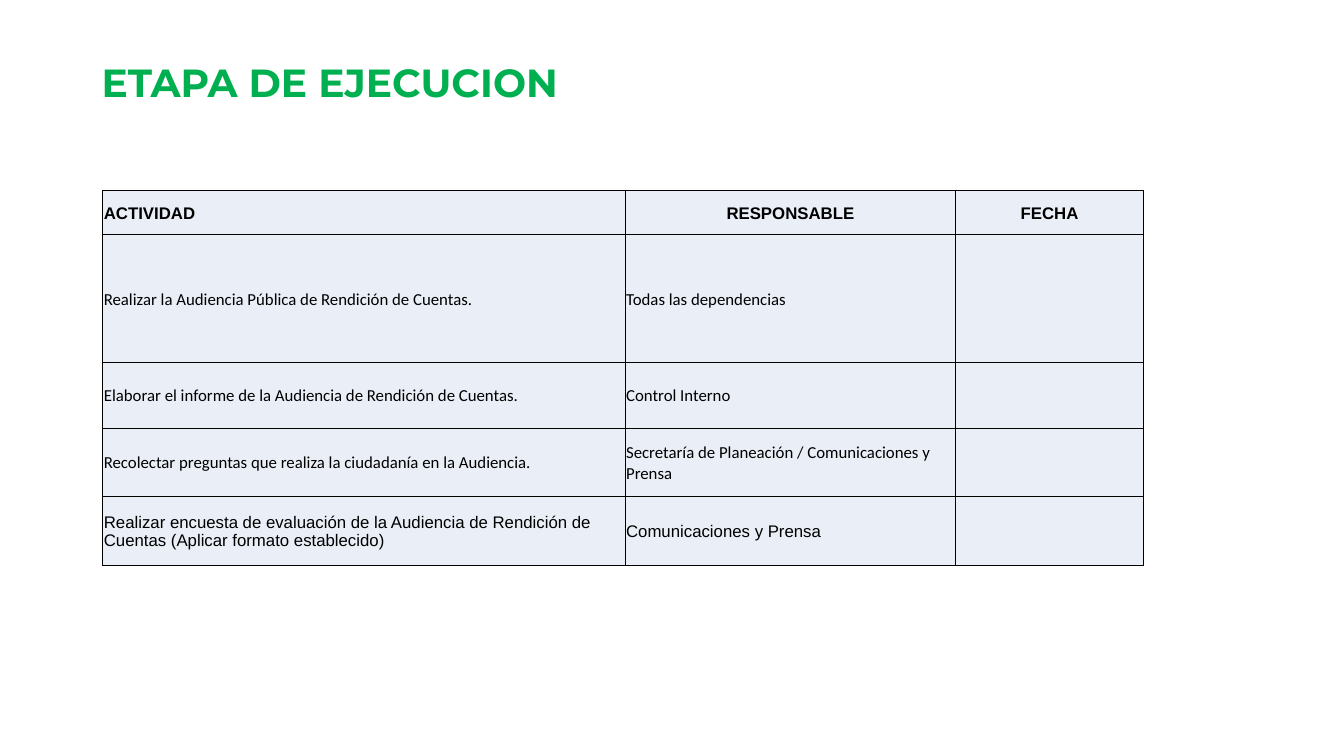
from dataclasses import dataclass
from lxml.etree import SubElement
from pptx import Presentation
from pptx.dml.color import RGBColor as RGB
from pptx.enum.text import MSO_ANCHOR as Anchor, MSO_AUTO_SIZE as AutoSize, PP_ALIGN as Align
from pptx.oxml.ns import qn
from pptx.util import Emu, Pt

EMU_PER_PX = 9144


@dataclass(frozen=True)
class Theme:
    title_color: str = "00B050"
    ink: str = "000000"
    cell_fill: str = "EAEFF7"
    title_size: int = 28
    table_size: int = 12
    border_width: int = 1
    title_font: str = "Montserrat"
    heading_font: str = "Arial"
    activity_font: str = "Calibri"


THEME = Theme()
HEADINGS = ("ACTIVIDAD", "RESPONSABLE", "FECHA")
ACTIVITIES = (
    ("Realizar la Audiencia Pública de Rendición de Cuentas.", "Todas las dependencias", ""),
    ("Elaborar el informe de la Audiencia de Rendición de Cuentas.", "Control Interno", ""),
    ("Recolectar preguntas que realiza la ciudadanía en la Audiencia.",
     "Secretaría de Planeación / Comunicaciones y Prensa", ""),
)
SURVEY = ("Realizar encuesta de evaluación de la Audiencia de Rendición de Cuentas "
          "(Aplicar formato establecido)", "Comunicaciones y Prensa", "")
COLUMN_WIDTHS = (518, 328, 186)
ROW_HEIGHTS = (44, 127, 65, 68, 68)


def px(length):
    return Emu(length * EMU_PER_PX)


def style_font(paragraph, name, size, color, bold=False):
    font = paragraph.font
    font.name = name
    font.size = Pt(size)
    font.bold = bold
    font.color.rgb = RGB.from_string(color)


def add_title(slide, text, left, top, width, height):
    title = slide.shapes.add_textbox(px(left), px(top), px(width), px(height))
    frame = title.text_frame
    frame.word_wrap = True
    frame.auto_size = AutoSize.SHAPE_TO_FIT_TEXT
    frame.text = text
    style_font(frame.paragraphs[0], THEME.title_font, THEME.title_size, THEME.title_color, True)


def add_borders(cell):
    properties = cell._tc.get_or_add_tcPr()
    for side in ("a:lnL", "a:lnR", "a:lnT", "a:lnB"):
        border = SubElement(properties, qn(side), w=str(Pt(THEME.border_width)))
        fill = SubElement(border, qn("a:solidFill"))
        SubElement(fill, qn("a:srgbClr"), val=THEME.ink)


def fill_cell(cell, text, font_name, bold, align):
    add_borders(cell)
    cell.fill.solid()
    cell.fill.fore_color.rgb = RGB.from_string(THEME.cell_fill)
    cell.vertical_anchor = Anchor.MIDDLE
    cell.margin_left = cell.margin_right = cell.margin_top = px(1)
    cell.margin_bottom = 0
    cell.text = text
    paragraph = cell.text_frame.paragraphs[0]
    paragraph.alignment = align
    style_font(paragraph, font_name, THEME.table_size, THEME.ink, bold)


def fill_row(row, texts, font_name, bold=False, aligns=(Align.LEFT,) * 3):
    for cell, text, align in zip(row.cells, texts, aligns):
        fill_cell(cell, text, font_name, bold, align)


def add_schedule(slide, left, top):
    frame = slide.shapes.add_table(
        len(ROW_HEIGHTS), len(COLUMN_WIDTHS), px(left), px(top),
        px(sum(COLUMN_WIDTHS)), px(sum(ROW_HEIGHTS)))
    schedule = frame.table
    schedule.horz_banding = False
    for column, width in zip(schedule.columns, COLUMN_WIDTHS):
        column.width = px(width)
    for row, height in zip(schedule.rows, ROW_HEIGHTS):
        row.height = px(height)

    heading_row, *activity_rows, survey_row = schedule.rows
    fill_row(heading_row, HEADINGS, THEME.heading_font, True,
             (Align.LEFT, Align.CENTER, Align.CENTER))
    for row, activity in zip(activity_rows, ACTIVITIES):
        fill_row(row, activity, THEME.activity_font)
    fill_row(survey_row, SURVEY, THEME.heading_font)


def main():
    deck = Presentation()
    deck.slide_width, deck.slide_height = px(1333), px(750)
    slide = deck.slides.add_slide(deck.slide_layouts[6])
    add_title(slide, "ETAPA DE EJECUCION", 91, 53, 906, 57)
    add_schedule(slide, 102, 189)
    deck.save("out.pptx")


if __name__ == "__main__":
    main()
